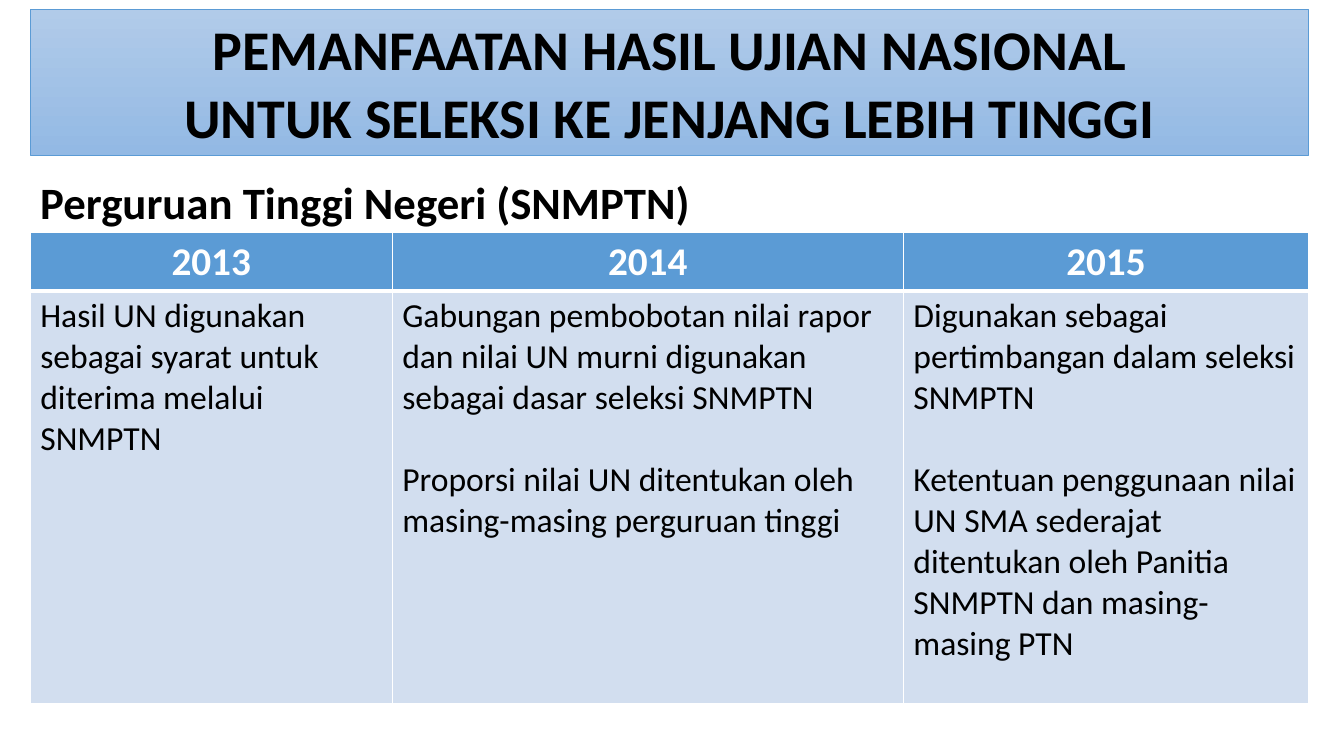
from dataclasses import dataclass

import pptx
import pptx.dml.color
import pptx.enum.text
import pptx.oxml
import pptx.oxml.ns
import pptx.util
from pptx.enum.shapes import MSO_SHAPE

Inches = pptx.util.Inches
Pt = pptx.util.Pt
RGBColor = pptx.dml.color.RGBColor
PP_ALIGN = pptx.enum.text.PP_ALIGN

BLACK = RGBColor(0x00, 0x00, 0x00)
WHITE = RGBColor(0xFF, 0xFF, 0xFF)
BLUE = RGBColor(0x5B, 0x9B, 0xD5)
PALE_BLUE = RGBColor(0xD2, 0xDE, 0xEF)
BANNER_TOP = RGBColor(0xB1, 0xCB, 0xE9)
BANNER_BOTTOM = RGBColor(0x93, 0xB9, 0xE4)

FONT = "Calibri"
LEFT = Inches(0.3)
WIDTH = Inches(12.68)
HEADER_HEIGHT = Inches(0.57)
BODY_HEIGHT = Inches(4.1)
THIN, THICK = Pt(1), Pt(3)


@dataclass(frozen=True)
class TextStyle:
    size: int
    color: RGBColor
    bold: bool
    alignment: PP_ALIGN
    gap: float = 0


@dataclass(frozen=True)
class YearColumn:
    year: str
    width: float
    policies: tuple[str, ...]


TITLE_STYLE = TextStyle(40, BLACK, True, PP_ALIGN.CENTER)
SUBTITLE_STYLE = TextStyle(32, BLACK, True, PP_ALIGN.LEFT)
HEADER_STYLE = TextStyle(28, WHITE, True, PP_ALIGN.CENTER)
BODY_STYLE = TextStyle(24, BLACK, False, PP_ALIGN.LEFT, gap=29.3)

TITLE_LINES = (
    "PEMANFAATAN HASIL UJIAN NASIONAL",
    "UNTUK SELEKSI KE JENJANG LEBIH TINGGI",
)

YEAR_COLUMNS = (
    YearColumn("2013", 3.59, (
        "Hasil UN digunakan sebagai syarat untuk diterima melalui SNMPTN",
    )),
    YearColumn("2014", 5.07, (
        "Gabungan pembobotan nilai rapor dan nilai UN murni digunakan "
        "sebagai dasar seleksi SNMPTN",
        "Proporsi nilai UN ditentukan oleh masing-masing perguruan tinggi",
    )),
    YearColumn("2015", 4.02, (
        "Digunakan sebagai pertimbangan dalam seleksi SNMPTN",
        "Ketentuan penggunaan nilai UN SMA sederajat ditentukan oleh "
        "Panitia SNMPTN dan masing-masing PTN",
    )),
)


def write_text(text_frame, lines: tuple[str, ...], style: TextStyle) -> None:
    text_frame.word_wrap = True
    for index, line in enumerate(lines):
        paragraph = text_frame.add_paragraph() if index else text_frame.paragraphs[0]
        paragraph.alignment = style.alignment
        if index and style.gap:
            paragraph.space_before = Pt(style.gap)
        run = paragraph.add_run()
        run.text = line
        run.font.name = FONT
        run.font.size = Pt(style.size)
        run.font.bold = style.bold
        run.font.color.rgb = style.color


def set_borders(cell, top: int, bottom: int) -> None:
    properties = cell._tc.get_or_add_tcPr()
    for side, width in (("L", THIN), ("R", THIN), ("T", top), ("B", bottom)):
        properties.append(pptx.oxml.parse_xml(
            f'<a:ln{side} {pptx.oxml.ns.nsdecls("a")} w="{width}">'
            f'<a:solidFill><a:srgbClr val="{WHITE}"/></a:solidFill></a:ln{side}>'
        ))


def fill_cell(cell, lines: tuple[str, ...], style: TextStyle, color: RGBColor,
              top: int, bottom: int) -> None:
    set_borders(cell, top, bottom)
    cell.fill.solid()
    cell.fill.fore_color.rgb = color
    write_text(cell.text_frame, lines, style)


def add_banner(slide) -> None:
    banner = slide.shapes.add_shape(
        MSO_SHAPE.RECTANGLE, LEFT, Inches(0.09), WIDTH, Inches(1.45))
    banner.shadow.inherit = False
    banner.fill.gradient()
    banner.fill.gradient_angle = 270
    for stop, color in zip(banner.fill.gradient_stops, (BANNER_TOP, BANNER_BOTTOM)):
        stop.color.rgb = color
    banner.line.color.rgb = BLUE
    banner.line.width = Pt(0.5)
    write_text(banner.text_frame, TITLE_LINES, TITLE_STYLE)


def add_subtitle(slide) -> None:
    subtitle = slide.shapes.add_textbox(LEFT, Inches(1.68), Inches(7.72), Inches(0.64))
    write_text(subtitle.text_frame, ("Perguruan Tinggi Negeri (SNMPTN)",), SUBTITLE_STYLE)


def add_year_table(slide) -> None:
    table = slide.shapes.add_table(
        2, len(YEAR_COLUMNS), LEFT, Inches(2.31), WIDTH,
        HEADER_HEIGHT + BODY_HEIGHT).table
    table.rows[0].height = HEADER_HEIGHT
    table.rows[1].height = BODY_HEIGHT
    for index, column in enumerate(YEAR_COLUMNS):
        table.columns[index].width = Inches(column.width)
        fill_cell(table.cell(0, index), (column.year,), HEADER_STYLE, BLUE, THIN, THICK)
        fill_cell(table.cell(1, index), column.policies, BODY_STYLE, PALE_BLUE, THICK, THIN)


def main() -> None:
    presentation = pptx.Presentation()
    presentation.slide_width = Inches(13.33)
    presentation.slide_height = Inches(7.5)
    slide = presentation.slides.add_slide(presentation.slide_layouts[6])
    add_banner(slide)
    add_year_table(slide)
    add_subtitle(slide)
    presentation.save("out.pptx")


if __name__ == "__main__":
    main()
